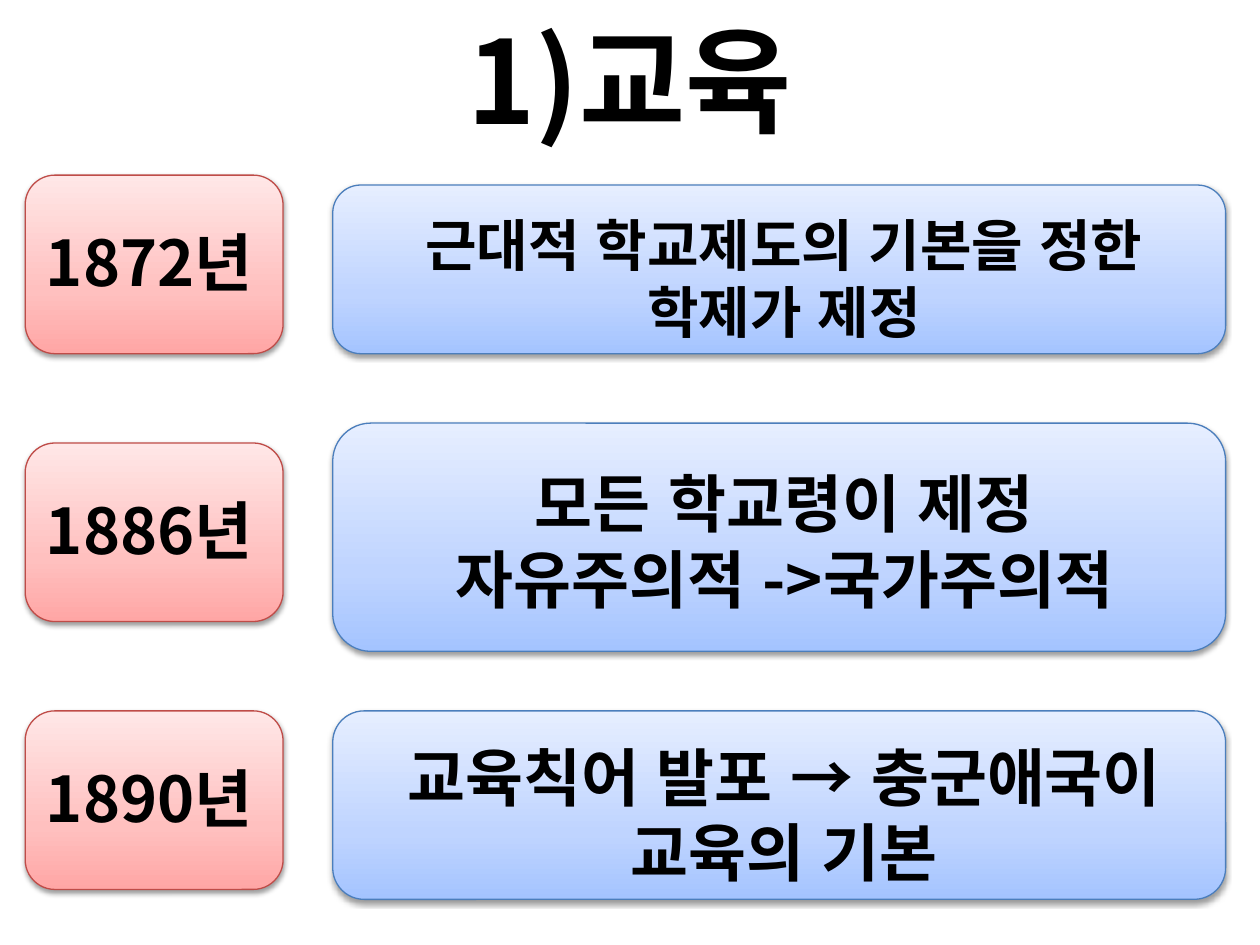
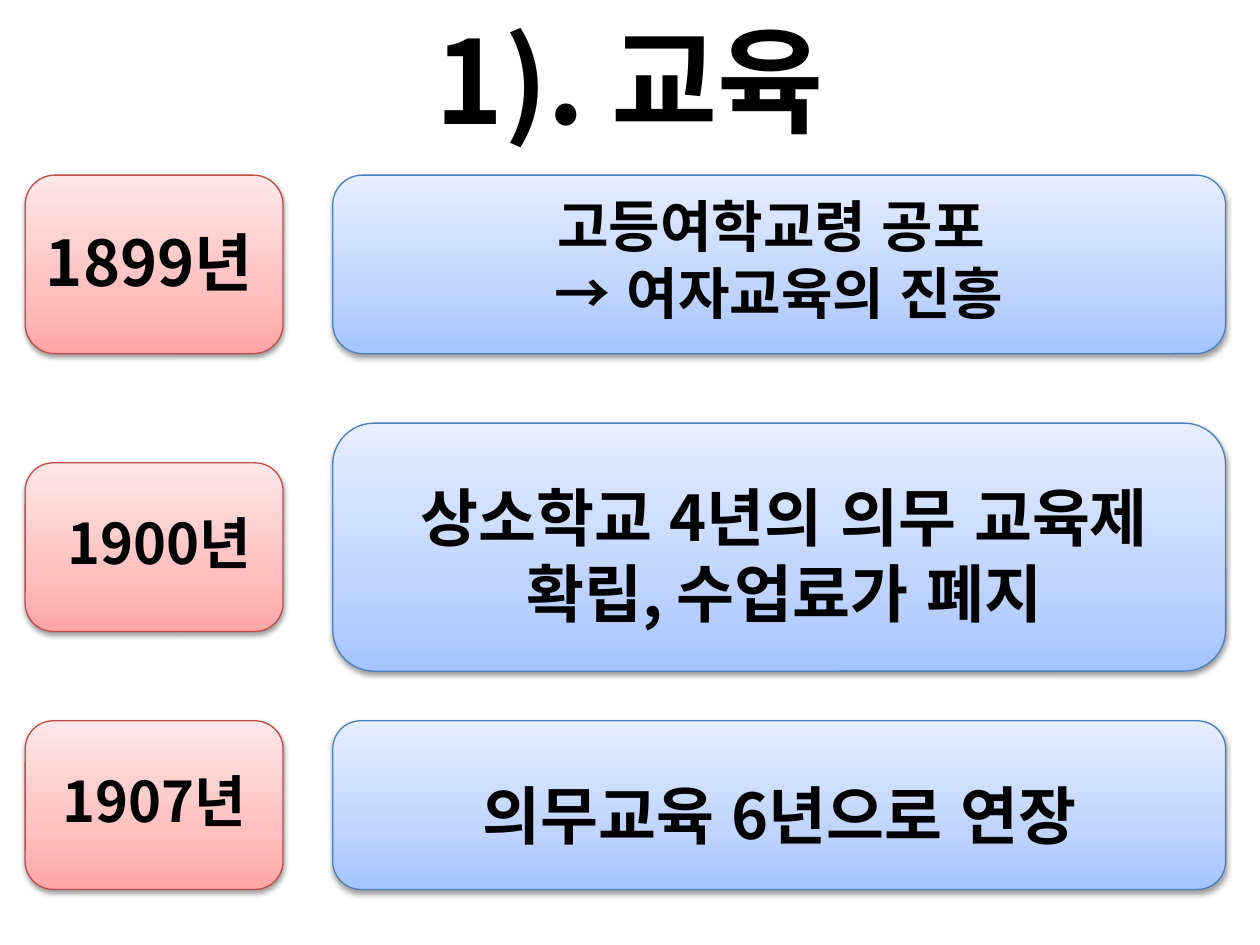
from dataclasses import dataclass
from lxml.etree import SubElement
from pptx import Presentation
from pptx.dml.color import RGBColor as Rgb
from pptx.enum.lang import MSO_LANGUAGE_ID as Lang
from pptx.enum.shapes import MSO_SHAPE as Preset
from pptx.enum.text import MSO_ANCHOR as Anchor, MSO_AUTO_SIZE as Fit, PP_ALIGN as Align
from pptx.oxml.ns import qn
from pptx.util import Inches, Pt


@dataclass(frozen=True)
class Theme:
    """Colours, type sizes and the card grid."""
    font: str = "Noto Sans CJK KR"
    ink: str = "000000"
    title_size: int = 66
    large: int = 36
    medium: int = 32
    pink: tuple = ("BF4C48", "FFA6A5", "FFC0BF", "FFE7E7")
    blue: tuple = ("4B7EBC", "A4C4FF", "BFD4FF", "E6EEFF")
    stops: tuple = (0, 35, 100)
    width: float = 10
    height: float = 7.5
    title_share: float = 1 / 6
    left: float = 0.2
    top: float = 1.39
    columns: int = 127


THEME = Theme()
YEAR_COLUMN, YEAR_SPAN = 0, 26
EVENT_COLUMN, EVENT_SPAN = 31, 90


def assign(target, values):
    """Set every attribute named in a dict."""
    for name, value in values.items():
        setattr(target, name, value)


class Deck:
    """Draws titles and timeline cards on the current slide."""

    def __init__(self, theme):
        self.theme = theme
        self.show = Presentation()
        assign(self.show, {"slide_width": Inches(theme.width),
                           "slide_height": Inches(theme.height)})
        self.slide = None

    def new_slide(self, heading):
        """Start a blank slide under a centred heading."""
        self.slide = self.show.slides.add_slide(self.show.slide_layouts[6])
        box = (0, 0, Inches(self.theme.width), Inches(self.theme.height * self.theme.title_share))
        self.text(self.slide.shapes, box, [heading], self.theme.title_size,
                  {"vertical_anchor": Anchor.MIDDLE, "auto_size": Fit.NONE})

    def cell(self, column, row, columns, rows):
        """Turn grid units into left, top, width and height."""
        unit = self.theme.width / self.theme.columns
        return (Inches(self.theme.left + column * unit), Inches(self.theme.top + row * unit),
                Inches(columns * unit), Inches(rows * unit))

    def text(self, shapes, box, lines, size, frame_format):
        """Add bold centred lines in the theme font."""
        frame = shapes.add_textbox(*box).text_frame
        assign(frame, {"word_wrap": True, **frame_format})
        for index, line in enumerate(lines):
            paragraph = frame.add_paragraph() if index else frame.paragraphs[0]
            paragraph.alignment = Align.CENTER
            run = paragraph.add_run()
            run.text = line
            assign(run.font, {"name": self.theme.font, "size": Pt(size), "bold": True,
                              "language_id": Lang.KOREAN})
            run.font.color.rgb = Rgb.from_string(self.theme.ink)
            SubElement(run.font._element, qn("a:ea"), typeface=self.theme.font)

    def panel(self, shapes, box, palette):
        """Add a rounded panel with a gradient, an outline and a soft shadow."""
        outline, *shades = palette
        panel = shapes.add_shape(Preset.ROUNDED_RECTANGLE, *box)
        panel.fill.gradient()
        panel.fill.gradient_angle = 90
        properties = panel._element.spPr
        ramp = next(properties.iter(qn("a:gsLst")))
        ramp.clear()
        for stop, shade in zip(self.theme.stops, shades):
            mark = SubElement(ramp, qn("a:gs"), pos=str(stop * 1000))
            SubElement(mark, qn("a:srgbClr"), val=shade)
        panel.line.color.rgb = Rgb.from_string(outline)
        panel.line.width = Pt(0.75)
        panel.shadow.inherit = False
        shadow = SubElement(properties.find(qn("a:effectLst")), qn("a:outerShdw"),
                            blurRad=str(Pt(3.1)), dist=str(Pt(1.6)), dir="5400000",
                            rotWithShape="0")
        tint = SubElement(shadow, qn("a:srgbClr"), val=self.theme.ink)
        SubElement(tint, qn("a:alpha"), val="38000")

    def card(self, column, span, palette, row, rows, lines, size, drop, indent=0, trim=0):
        """Group a panel with its text, set in by grid units."""
        shapes = self.slide.shapes.add_group_shape().shapes
        self.panel(shapes, self.cell(column, row, span, rows), palette)
        self.text(shapes, self.cell(column + indent, row + drop, span - indent - trim, rows - drop),
                  lines, size, {"vertical_anchor": Anchor.TOP, "auto_size": Fit.SHAPE_TO_FIT_TEXT})

    def year(self, row, rows, label, size, drop, **inset):
        """Add a pink year card."""
        self.card(YEAR_COLUMN, YEAR_SPAN, self.theme.pink, row, rows, [label], size, drop, **inset)

    def event(self, row, rows, lines, size, drop, **inset):
        """Add a blue event card."""
        self.card(EVENT_COLUMN, EVENT_SPAN, self.theme.blue, row, rows, lines, size, drop, **inset)


def main():
    """Build both education slides."""
    deck = Deck(THEME)
    large, medium = THEME.large, THEME.medium

    deck.new_slide("1)교육")
    for step, label in enumerate(("1872년", "1886년", "1890년")):
        deck.year(27 * step, 18, label, large, 4.25, trim=1)
    for row, rows, lines, size, drop in (
            (1, 17, ["근대적 학교제도의 기본을 정한 학제가 제정"], medium, 1.9),
            (25, 23, ["모든 학교령이 제정", "자유주의적 ->국가주의적"], large, 3.55),
            (54, 19, ["교육칙어 발포 → 충군애국이 교육의 기본"], large, 2.15)):
        deck.event(row, rows, lines, size, drop, indent=1)

    deck.new_slide("1). 교육")
    deck.year(0, 18, "1899년", large, 4.25, trim=1)
    deck.year(29, 17, "1900년", medium, 4, indent=1)
    deck.year(55, 17, "1907년", medium, 4)
    deck.event(0, 18, ["고등여학교령 공포 ", "→ 여자교육의 진흥"], medium, 1)
    deck.event(25, 25, ["상소학교 4년의 의무 교육제 확립, 수업료가 폐지"], large, 5, indent=1)
    deck.event(55, 17, ["의무교육 6년으로 연장"], large, 5)

    deck.show.save("out.pptx")


if __name__ == "__main__":
    main()
